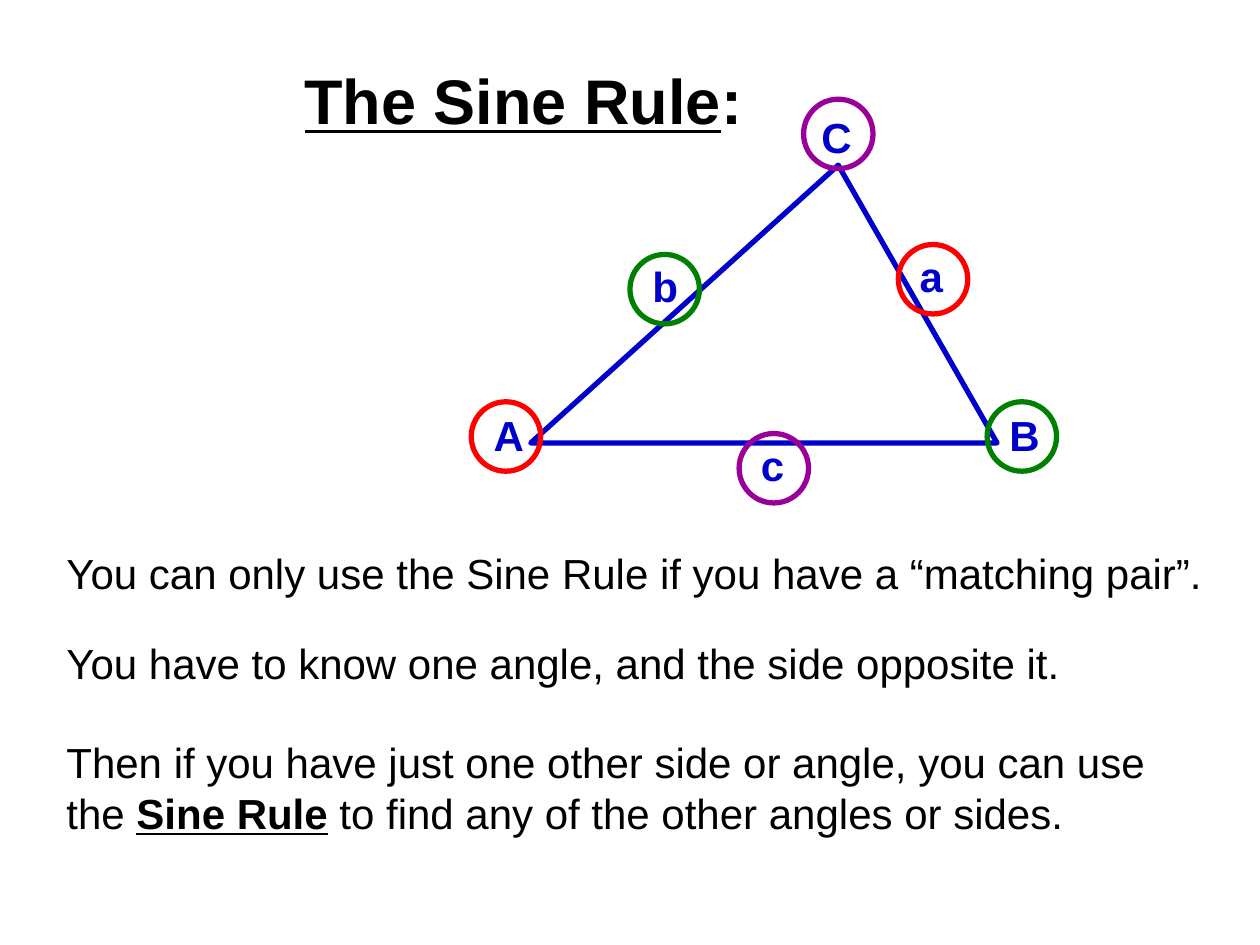
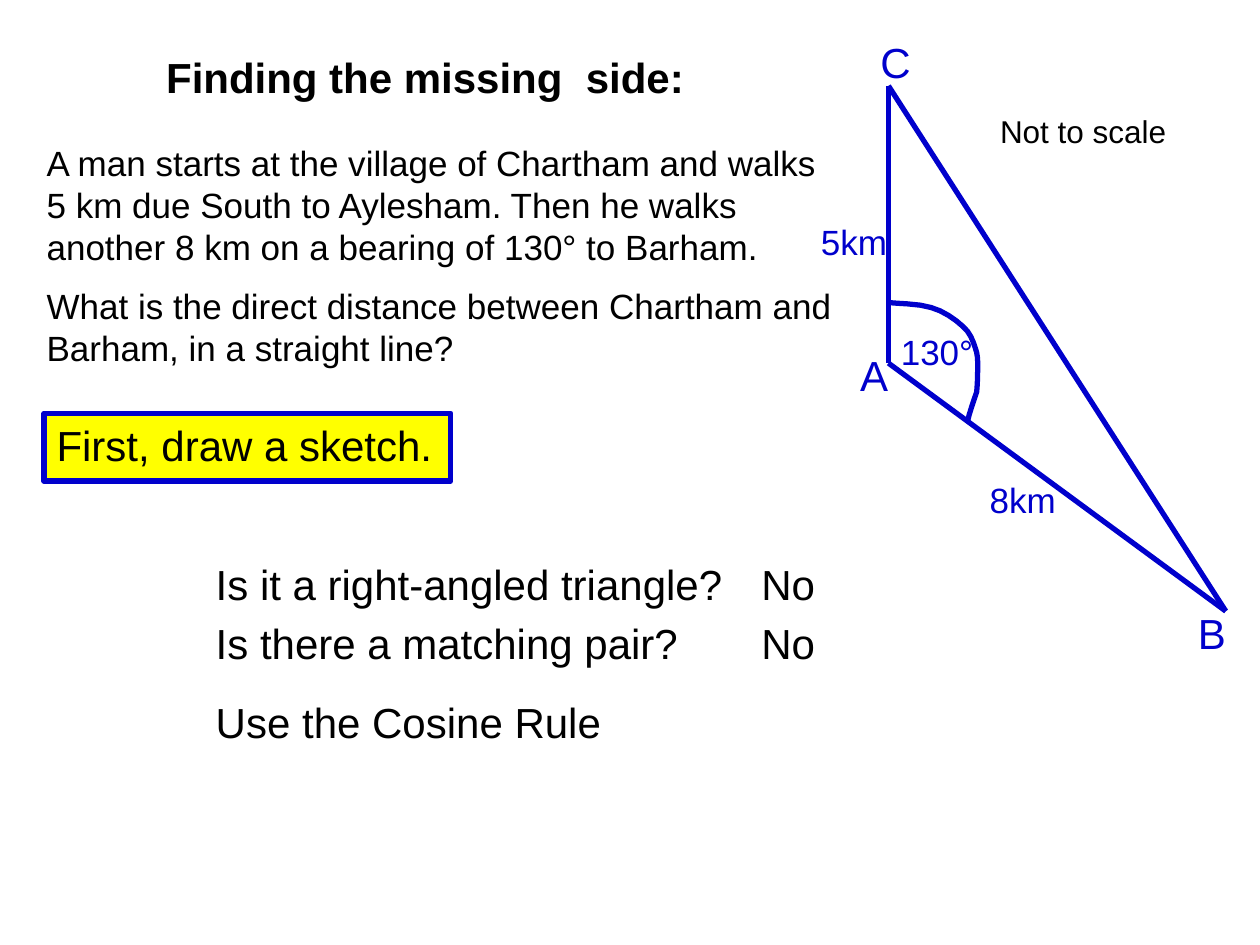
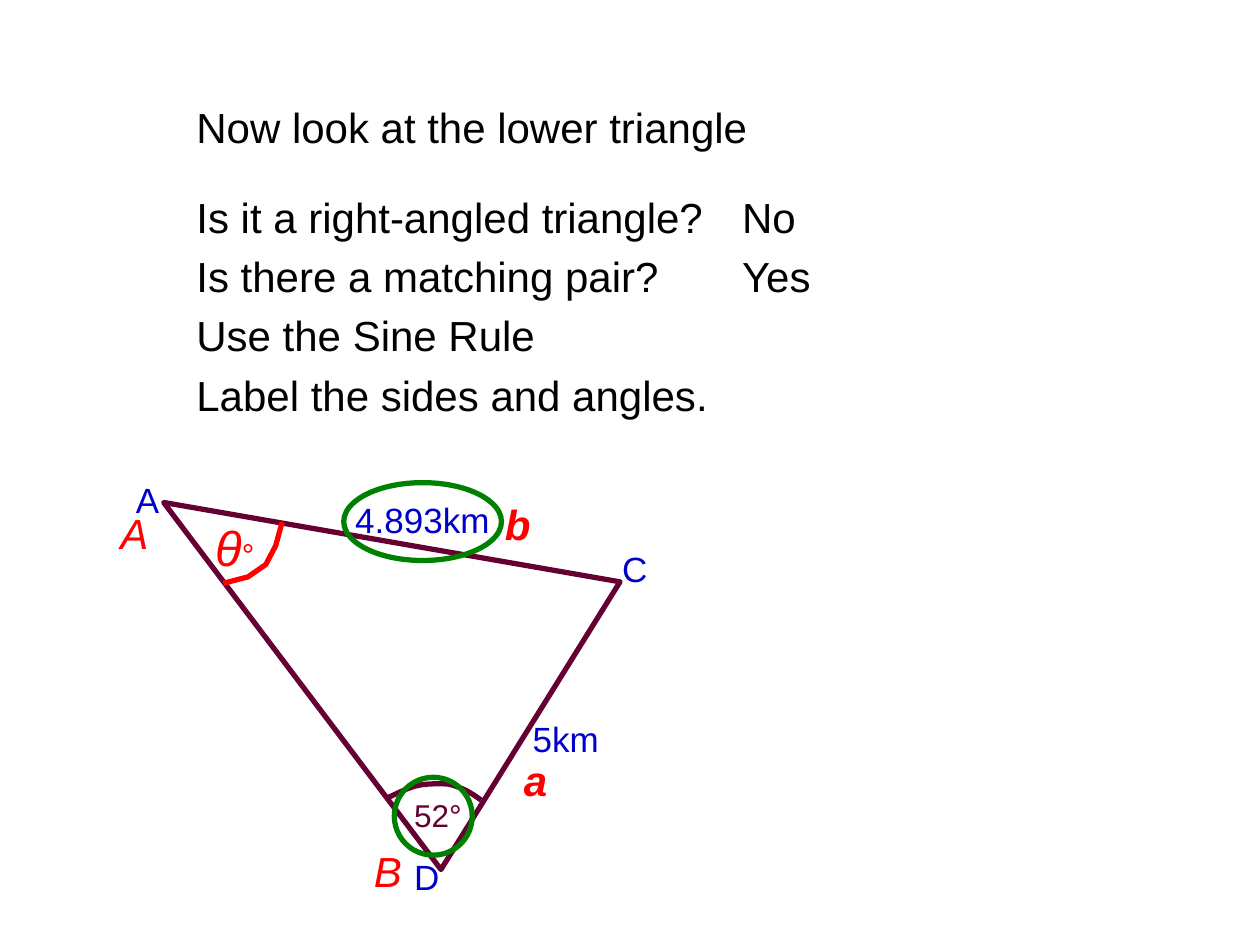
"""Build three slides on choosing between the sine rule and the cosine rule."""
from lxml import etree
from pptx import Presentation
from pptx import util as u
from pptx.dml import color as dml
from pptx.enum import shapes
from pptx.oxml import ns

COLORS = {
    "black": "000000", "blue": "0000CC", "red": "FF0000", "green": "008000",
    "purple": "990099", "maroon": "660033", "yellow": "FFFF00",
}
RGB = {name: dml.RGBColor.from_string(value) for name, value in COLORS.items()}
FONT = "Arial"
LINE = u.Pt(3)


def write(s, x, y, w, h, body, size=24, color="black", style=""):
    """Add a text box; "|" separates runs and their b, i, u styles."""
    sp = s.shapes.add_textbox(u.Cm(x), u.Cm(y), u.Cm(w), u.Cm(h))
    tf = sp.text_frame
    tf.word_wrap = True
    for n, line in enumerate(body.split("\n")):
        p = tf.add_paragraph() if n else tf.paragraphs[0]
        if n:
            p.space_before = u.Pt(size / 2)
        styles = style.split("|")
        for part, flags in zip(line.split("|"), styles):
            r = p.add_run()
            r.text = part
            r.font.name, r.font.size = FONT, u.Pt(size)
            r.font.color.rgb = RGB[color]
            r.font.bold, r.font.italic = "b" in flags, "i" in flags
            r.font.underline = "u" in flags
    return sp


def outline(s, points, color, close=False, curved=False):
    """Draw an unfilled path; a curved one is sampled from cubic Béziers."""
    if curved:
        path = points[:1]
        for i in range(0, len(points) - 1, 3):
            for t in (0.25, 0.5, 0.75, 1):
                weights = ((1 - t)**3, 3 * t * (1 - t)**2, 3 * t**2 * (1 - t), t**3)
                path.append([sum(k * pt[axis] for k, pt in zip(weights, points[i:i + 4]))
                             for axis in (0, 1)])
        points = path
    emu = [(u.Cm(x), u.Cm(y)) for x, y in points]
    fb = s.shapes.build_freeform(*emu[0])
    fb.add_line_segments(emu[1:], close=close)
    sp = fb.convert_to_shape()
    sp.shadow.inherit = False
    sp.fill.background()
    sp.line.color.rgb, sp.line.width = RGB[color], LINE


prs = Presentation()
prs.slide_width, prs.slide_height = u.Cm(25.4), u.Cm(19.05)
rule, sketch, lower = [prs.slides.add_slide(prs.slide_layouts[6]) for _ in range(3)]

write(rule, 5.89, 1.12, 12.8, 1.78, "The Sine Rule|:", 36, style="bu|b")
outline(rule, [(10.7, 8.93), (20.1, 8.93), (16.9, 3.33)], "blue", close=True)
for letter, x, y, w in [
    ("A", 9.7, 8.13, 1.4), ("B", 20.1, 8.13, 1.4), ("C", 16.31, 2.13, 1.4),
    ("a", 18.29, 4.93, 1), ("b", 12.9, 5.13, 1), ("c", 15.09, 8.74, 1),
]:
    write(rule, x, y, w, 1.27, letter, color="blue", style="b")
for y, h, body, style in [
    (10.92, 1.27, "You can only use the Sine Rule if you have a “matching pair”.", ""),
    (12.73, 1.27, "You have to know one angle, and the side opposite it.", ""),
    (14.73, 2.29, "Then if you have just one other side or angle, you can use the |Sine Rule"
     "| to find any of the other angles or sides.", "|bu|"),
]:
    write(rule, 1.09, y, 23.6, h, body, style=style)

write(sketch, 3.1, 0.91, 13, 1.27, "Finding the missing  side:", style="b")
write(sketch, 0.69, 2.72, 16.41, 4.9,
      "A man starts at the village of Chartham and walks 5 km due South to Aylesham. "
      "Then he walks another 8 km on a bearing of 130° to Barham.\n"
      "What is the direct distance between Chartham and Barham, in a straight line?", 20)
sp = write(sketch, 0.89, 8.33, 8.2, 1.37, "First, draw a sketch.")
sp.fill.solid()
sp.fill.fore_color.rgb = RGB["yellow"]
sp.line.color.rgb, sp.line.width = RGB["blue"], LINE
outline(sketch, [
    (17.91, 6.1), (18.03, 6.12), (18.54, 6.12), (18.77, 6.2), (19.02, 6.27),
    (19.25, 6.43), (19.41, 6.58), (19.56, 6.71), (19.61, 6.86), (19.66, 7.01),
    (19.71, 7.14), (19.71, 7.24), (19.71, 7.37), (19.71, 7.52), (19.71, 7.7),
    (19.69, 7.9), (19.63, 8.08), (19.53, 8.36), (19.51, 8.48),
], "blue", curved=True)
corners = [(17.91, 1.73), (17.91, 7.32), (24.71, 12.32)]
for start, end in zip(corners, corners[1:] + corners[:1]):
    cx = sketch.shapes.add_connector(shapes.MSO_CONNECTOR.STRAIGHT,
                                     *[u.Cm(v) for v in start + end])
    cx.line.color.rgb, cx.line.width = RGB["blue"], LINE
    etree.SubElement(cx._element.spPr, ns.qn("a:effectLst"))
for body, x, y, w, size in [
    ("8km", 19.7, 9.53, 2.2, 20), ("5km", 16.3, 4.32, 2.2, 20),
    ("130°", 17.91, 6.53, 2.01, 20), ("A", 17.09, 6.93, 1.2, 24),
    ("C", 17.5, 0.61, 1.2, 24), ("B", 23.9, 12.12, 1.1, 24),
]:
    write(sketch, x, y, w, 1.27, body, size, "blue")
write(sketch, 19.91, 2.13, 4.6, 1.02, "Not to scale", 18)
write(sketch, 4.1, 13.92, 10, 1.27, "Use the Cosine Rule")

for s, x, y, pair in [(sketch, 4.1, 11.13, "No"), (lower, 3.71, 3.73, "Yes")]:
    for row, (question, answer) in enumerate([
        ("Is it a right-angled triangle?", "No"), ("Is there a matching pair?", pair),
    ]):
        write(s, x, y + 1.2 * row, 11.2, 1.27, question)
        write(s, x + 11, y + 1.2 * row, 2.01, 1.27, answer)

for body, y in [
    ("Now look at the lower triangle", 1.93), ("Use the Sine Rule", 6.12),
    ("Label the sides and angles.", 7.32),
]:
    write(lower, 3.71, y, 16.4, 1.27, body)
outline(lower, [(3.3, 10.13), (12.5, 11.73), (8.89, 17.53)], "maroon", close=True)
outline(lower, [
    (7.82, 16.08), (7.9, 16.05), (8.18, 15.9), (8.36, 15.85), (8.53, 15.8),
    (8.76, 15.8), (8.92, 15.8), (9.09, 15.8), (9.19, 15.85), (9.32, 15.9),
    (9.45, 15.95), (9.63, 16.08), (9.7, 16.13),
], "maroon", curved=True)
outline(lower, [(5.69, 10.52), (5.56, 11), (5.36, 11.38), (5, 11.63), (4.5, 11.76)], "red")
for body, x, y, w in [
    ("A", 2.49, 9.53, 2), ("5km", 10.49, 14.33, 2), ("C", 12.29, 10.92, 2),
    ("D", 8.1, 17.12, 2), ("4.893km", 6.91, 9.93, 3.78),
]:
    write(lower, x, y, w, 1.09, body, 20, "blue")
for body, x, y, style in [
    ("A", 2.18, 10.11, "i"), ("B", 7.29, 16.92, "i"),
    ("a", 10.31, 15.09, "bi"), ("b", 9.93, 9.93, "bi"),
]:
    write(lower, x, y, 1.6, 1.27, body, color="red", style=style)
write(lower, 8.1, 15.93, 1.6, 1.02, "52°", 18, "maroon")
sp = write(lower, 4.09, 10.31, 1.6, 1.45, "θ|°", 28, "red", "i|")
sp.text_frame.paragraphs[0].runs[1].font.size = u.Pt(18)

for s, x, y, w, h, color in [
    (rule, 9.5, 8.1, 1.4, 1.4, "red"), (rule, 18.11, 4.93, 1.4, 1.4, "red"),
    (rule, 19.9, 8.1, 1.4, 1.4, "green"), (rule, 12.7, 5.13, 1.4, 1.4, "green"),
    (rule, 16.2, 2, 1.4, 1.4, "purple"), (rule, 14.9, 8.74, 1.4, 1.4, "purple"),
    (lower, 6.93, 9.73, 3.18, 1.57, "green"), (lower, 7.95, 15.67, 1.57, 1.57, "green"),
]:
    sp = s.shapes.add_shape(shapes.MSO_SHAPE.OVAL, u.Cm(x), u.Cm(y), u.Cm(w), u.Cm(h))
    sp.shadow.inherit = False
    sp.fill.background()
    sp.line.color.rgb, sp.line.width = RGB[color], LINE

prs.save("out.pptx")
